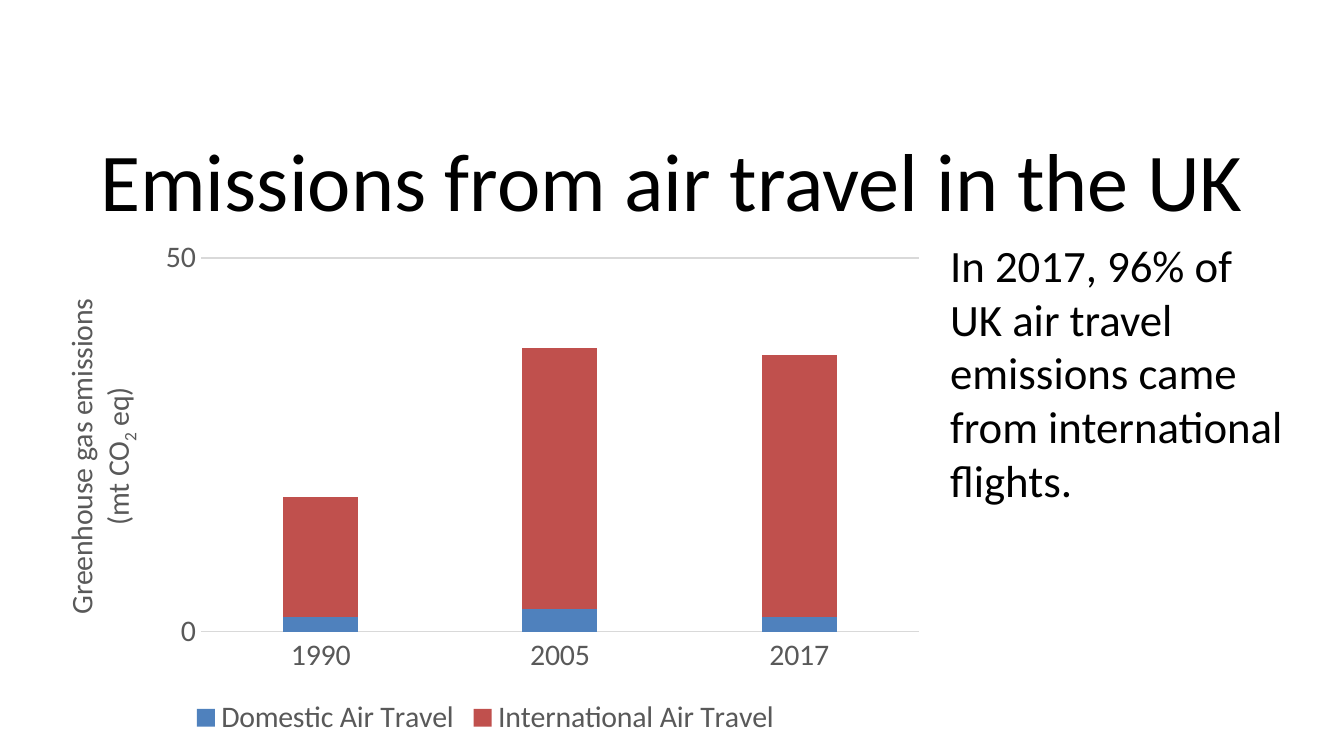
from lxml.etree import SubElement
from pptx import Presentation
from pptx.chart.data import CategoryChartData
from pptx.dml.color import RGBColor
from pptx.enum.chart import XL_CHART_TYPE, XL_LEGEND_POSITION, XL_TICK_MARK
from pptx.enum.text import MSO_ANCHOR, PP_ALIGN
from pptx.oxml.ns import qn
from pptx.util import Pt

PX = 914400 / 134.4
FONT = "Calibri"
COLOURS = {
    "text": "000000",
    "label": "595959",
    "rule": "D9D9D9",
    "Domestic Air Travel": "4F81BD",
    "International Air Travel": "C0504D",
}
EMISSIONS = {
    "Domestic Air Travel": (2, 3, 2),
    "International Air Travel": (16, 35, 35),
}


def set_font(font, size, colour):
    font.name = FONT
    font.size = Pt(size)
    font.bold = False
    font.color.rgb = RGBColor.from_string(COLOURS[colour])


def add_text(page, bounds, text, size, align, anchor):
    box = page.shapes.add_textbox(*(round(length * PX) for length in bounds))
    frame = box.text_frame
    frame.word_wrap = True
    frame.vertical_anchor = anchor
    paragraph = frame.paragraphs[0]
    paragraph.text = text
    paragraph.alignment = align
    set_font(paragraph.font, size, "text")


deck = Presentation()
deck.slide_width = round(1344 * PX)
deck.slide_height = round(756 * PX)
page = deck.slides.add_slide(deck.slide_layouts[6])

add_text(page, (937, 231, 360, 465),
         "In 2017, 96% of UK air travel emissions came from international flights.",
         24, PP_ALIGN.LEFT, MSO_ANCHOR.TOP)
add_text(page, (27, 116, 1291, 126), "Emissions from air travel in the UK",
         44, PP_ALIGN.CENTER, MSO_ANCHOR.MIDDLE)

# Stacked columns
data = CategoryChartData()
data.categories = ["1990", "2005", "2017"]
for name, values in EMISSIONS.items():
    data.add_series(name, values)
bounds = [round(length * PX) for length in (34, 230, 903, 512)]
chart = page.shapes.add_chart(XL_CHART_TYPE.COLUMN_STACKED, *bounds, data).chart
chart.has_title = False
set_font(chart.font, 16, "label")

plot = chart.plots[0]
plot.gap_width = 219
plot.overlap = 100
plot.vary_by_categories = False
for series in plot.series:
    series.format.fill.solid()
    series.format.fill.fore_color.rgb = RGBColor.from_string(COLOURS[series.name])

chart.has_legend = True
chart.legend.position = XL_LEGEND_POSITION.BOTTOM
chart.legend.include_in_layout = False
set_font(chart.legend.font, 16, "label")

# Axes and gridlines
years, amounts = chart.category_axis, chart.value_axis
for axis in (years, amounts):
    axis.major_tick_mark = XL_TICK_MARK.NONE
    axis.minor_tick_mark = XL_TICK_MARK.NONE
    set_font(axis.tick_labels.font, 16, "label")
amounts.minimum_scale = 0
amounts.maximum_scale = 50
amounts.major_unit = 50
amounts.has_major_gridlines = True
amounts.format.line.fill.background()
for line in (years.format.line, amounts.major_gridlines.format.line):
    line.color.rgb = RGBColor.from_string(COLOURS["rule"])
    line.width = Pt(0.75)

# Axis title with a subscript 2, read from bottom to top
frame = amounts.axis_title.text_frame
frame.text = "Greenhouse gas emissions"
unit = frame.add_paragraph()
for text in ("(mt CO", "2", " eq)"):
    unit.add_run().text = text
for paragraph in frame.paragraphs:
    set_font(paragraph.font, 16, "label")
    for span in paragraph.runs:
        set_font(span.font, 16, "label")
unit.runs[1].font._element.set("baseline", "-25000")
body = amounts.axis_title._element.find(".//" + qn("a:bodyPr"))
body.set("rot", "-5400000")
body.set("vert", "horz")

# Fixed inner plot area, as fractions of the chart
area = chart._chartSpace.chart.plotArea
for old in area.findall(qn("c:layout")):
    area.remove(old)
layout = SubElement(area, qn("c:layout"))
area.insert(0, layout)
manual = SubElement(layout, qn("c:manualLayout"))
for tag, value in (("layoutTarget", "inner"), ("xMode", "edge"), ("yMode", "edge"),
                   ("x", 0.185), ("y", 0.055), ("w", 0.795), ("h", 0.73)):
    SubElement(manual, qn("c:" + tag)).set("val", str(value))

deck.save("out.pptx")
